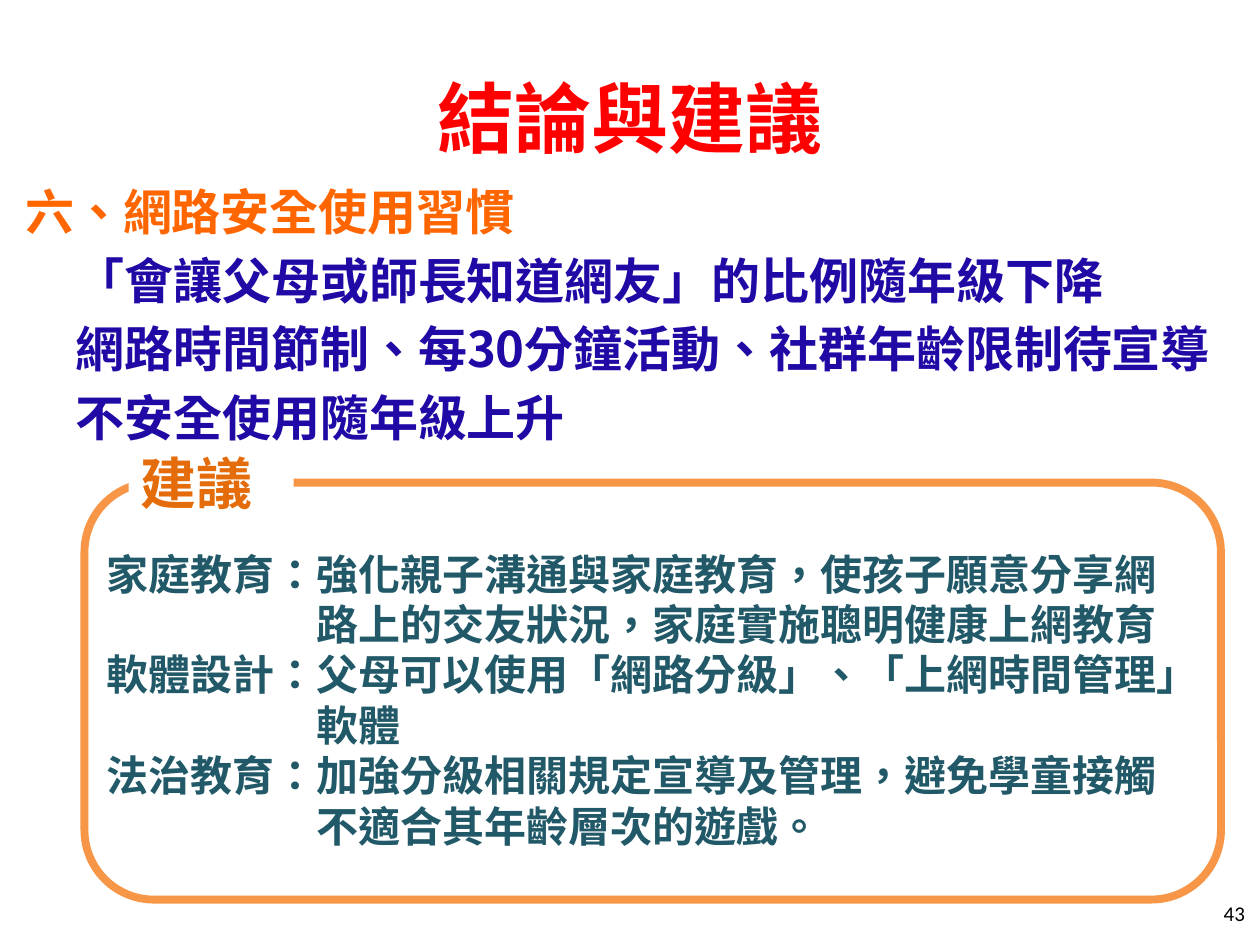
import pptx
import pptx.dml.color
import pptx.enum.shapes
import pptx.enum.text
import pptx.oxml.ns
import pptx.util
from lxml import etree

FONT = "Noto Sans CJK SC"
W, H = 10, 7.5
PP = pptx.enum.text.PP_ALIGN
ANCHOR = pptx.enum.text.MSO_ANCHOR
SHAPE = pptx.enum.shapes.MSO_SHAPE

TITLE = "結論與建議"
HEADING = "六、網路安全使用習慣"
FINDINGS = [
    "「會讓父母或師長知道網友」的比例隨年級下降",
    "網路時間節制、每30分鐘活動、社群年齡限制待宣導",
    "不安全使用隨年級上升",
]
LABEL = "建議"
ADVICE = [
    ("家庭教育：", "強化親子溝通與家庭教育，使孩子願意分享網",
     "路上的交友狀況，家庭實施聰明健康上網教育"),
    ("軟體設計：", "父母可以使用「網路分級」、「上網時間管理」", "軟體"),
    ("法治教育：", "加強分級相關規定宣導及管理，避免學童接觸",
     "不適合其年齡層次的遊戲。"),
]
PAGE = "43"
ADVICE_SIZE = 24


def rgb(value):
    return pptx.dml.color.RGBColor.from_string(value)


def place(sp, left, top, width, height):
    sp.left, sp.top, sp.width, sp.height = (
        pptx.util.Inches(v) for v in (left, top, width, height))


def set_frame(sp, anchor=ANCHOR.TOP):
    tf = sp.text_frame
    tf.word_wrap = True
    tf.auto_size = pptx.enum.text.MSO_AUTO_SIZE.NONE
    tf.vertical_anchor = anchor
    return tf


def next_paragraph(tf):
    """Return the empty first paragraph, or a new one after it."""
    p = tf.paragraphs[0]
    return tf.add_paragraph() if p.runs else p


def indent(p, margin, first):
    """Set the left margin and first-line offset in inches, without a bullet."""
    ppr = p._p.get_or_add_pPr()
    ppr.set("marL", str(pptx.util.Inches(margin)))
    ppr.set("indent", str(pptx.util.Inches(first)))
    etree.SubElement(ppr, pptx.oxml.ns.qn("a:buNone"))


def add_run(p, text, size, color, font=FONT, bold=True):
    r = p.add_run()
    r.text = text
    r.font.size = pptx.util.Pt(size)
    r.font.bold = bold
    r.font.name = font
    r.font.color.rgb = rgb(color)
    rpr = r._r.get_or_add_rPr()
    rpr.set("lang", "zh-TW")
    ea = etree.SubElement(rpr, pptx.oxml.ns.qn("a:ea"))
    ea.set("typeface", font)


def add_box(slide, kind, box, line=None):
    sp = slide.shapes.add_shape(kind, 0, 0, 0, 0)
    place(sp, *box)
    sp.shadow.inherit = False
    sp.fill.solid()
    sp.fill.fore_color.rgb = rgb("FFFFFF")
    if line:
        sp.line.color.rgb = rgb(line)
        sp.line.width = pptx.util.Pt(4.5)
    else:
        sp.line.fill.background()
    return sp


def add_text(slide, *box):
    sp = slide.shapes.add_textbox(0, 0, 0, 0)
    place(sp, *box)
    return set_frame(sp)


def main():
    prs = pptx.Presentation()
    prs.slide_width, prs.slide_height = pptx.util.Inches(W), pptx.util.Inches(H)
    slide = prs.slides.add_slide(prs.slide_layouts[1])
    title, body = slide.placeholders

    place(title, 0.05 * W, 0.04 * H, 0.9 * W, 1.25)
    p = next_paragraph(set_frame(title, ANCHOR.MIDDLE))
    p.alignment = PP.CENTER
    add_run(p, TITLE, 44, "FF0000")

    place(body, 0.1, 1.39, W - 0.2, 2.28)
    tf = set_frame(body)
    p = next_paragraph(tf)
    indent(p, 0, 0)
    add_run(p, HEADING, 28, "FF6600")
    for text in FINDINGS:
        p = next_paragraph(tf)
        indent(p, 0.9, -0.5)
        add_run(p, text, 28, "200AA6")

    add_box(slide, SHAPE.ROUNDED_RECTANGLE, (0.67, 3.83, 9.02, 3.31), "F79646")
    label = add_box(slide, SHAPE.RECTANGLE, (1.02, 3.51, 1.31, 0.84))
    p = next_paragraph(set_frame(label))
    p.alignment = PP.LEFT
    add_run(p, LABEL, 32, "E46C0A")

    tf = add_text(slide, 0.75, 4.3, 8.98, 2.52)
    for topic, first, second in ADVICE:
        p = next_paragraph(tf)
        hang = len(topic) * ADVICE_SIZE / 72
        indent(p, hang, -hang)
        add_run(p, topic + first, ADVICE_SIZE, "215968")
        p.add_line_break()
        add_run(p, second, ADVICE_SIZE, "215968")

    p = next_paragraph(add_text(slide, 7.65, 7.1, 2.33, 0.4))
    p.alignment = PP.RIGHT
    add_run(p, PAGE, 12, "000000", "Calibri", False)

    prs.save("out.pptx")


if __name__ == "__main__":
    main()
